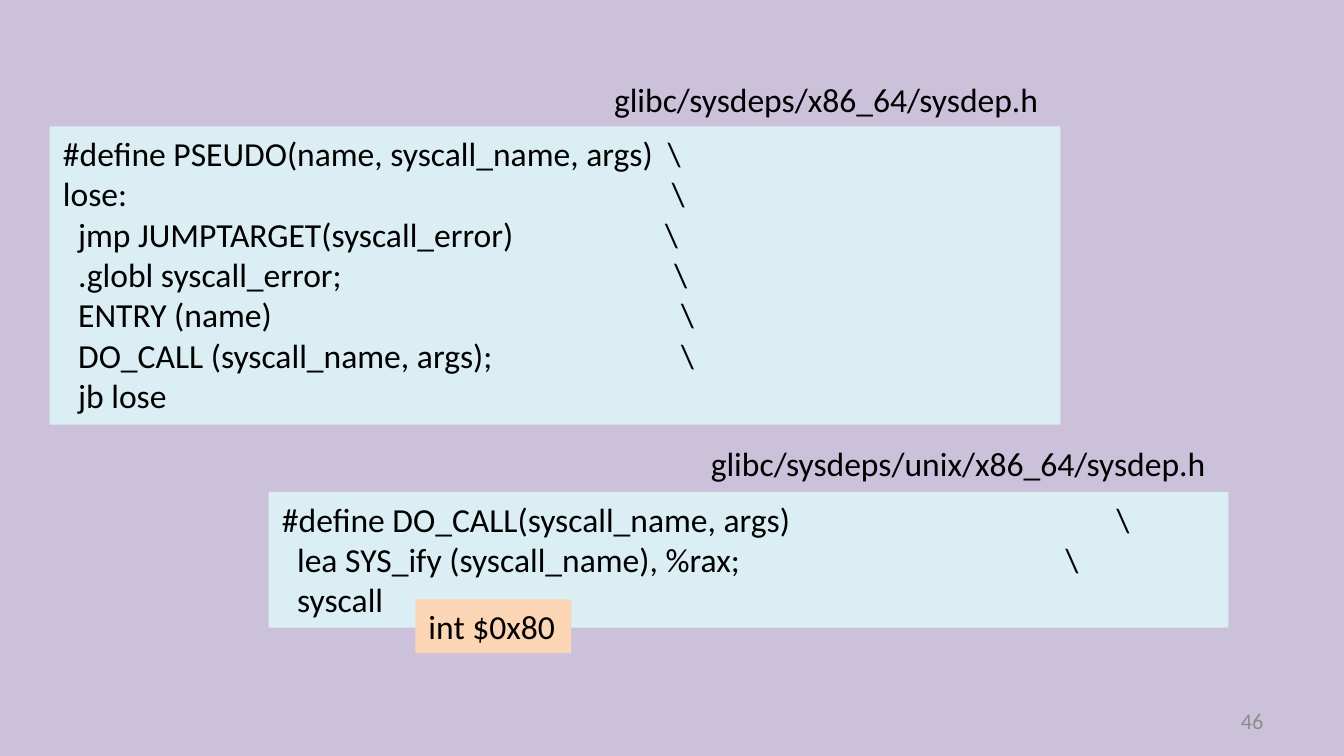
from lxml import etree
from pptx import Presentation
from pptx.dml.color import RGBColor
from pptx.enum.text import MSO_ANCHOR, MSO_AUTO_SIZE, PP_ALIGN
from pptx.oxml.ns import qn
from pptx.util import Inches, Pt

LILAC = RGBColor(0xCC, 0xC1, 0xDA)
PALE_BLUE = RGBColor(0xDB, 0xEE, 0xF4)
PEACH = RGBColor(0xFC, 0xD5, 0xB5)
BLACK = RGBColor(0, 0, 0)
GRAY = RGBColor(0x8C, 0x8C, 0x8C)

TOP, MIDDLE = MSO_ANCHOR.TOP, MSO_ANCHOR.MIDDLE
LEFT, RIGHT = PP_ALIGN.LEFT, PP_ALIGN.RIGHT
GROW, FIXED = MSO_AUTO_SIZE.SHAPE_TO_FIT_TEXT, MSO_AUTO_SIZE.NONE

# Each code line is paired with the tab stop, in inches, of its backslash.
PSEUDO_MACRO = [
    ("#define PSEUDO(name, syscall_name, args)", 4.5),
    ("lose:", 4.53),
    ("  jmp JUMPTARGET(syscall_error)", 4.48),
    ("  .globl syscall_error;", 4.55),
    ("  ENTRY (name)", 4.6),
    ("  DO_CALL (syscall_name, args);", 4.6),
    ("  jb lose", None),
]
DO_CALL_MACRO = [
    ("#define DO_CALL(syscall_name, args)", 6.21),
    ("  lea SYS_ify (syscall_name), %rax;", 5.83),
    ("  syscall", None),
]


def add_box(slide, place, fill=None, wrap=False, size=GROW, anchor=TOP):
    box = slide.shapes.add_textbox(*(Inches(length) for length in place))
    if fill is not None:
        box.fill.solid()
        box.fill.fore_color.rgb = fill
    frame_format = {"word_wrap": wrap, "auto_size": size, "vertical_anchor": anchor}
    for name, value in frame_format.items():
        setattr(box.text_frame, name, value)
    return box


def write(para, text, size=18, color=BLACK, align=LEFT):
    para.alignment = align
    span = para.add_run()
    span.text = text
    for name, value in {"name": "Calibri", "size": Pt(size)}.items():
        setattr(span.font, name, value)
    span.font.color.rgb = color


def add_tab_stop(para, position):
    tabs = etree.SubElement(para._p.get_or_add_pPr(), qn("a:tabLst"))
    etree.SubElement(tabs, qn("a:tab"), pos=str(Inches(position)), algn="l")


def add_label(slide, place, text, fill=None):
    box = add_box(slide, place, fill)
    write(box.text_frame.paragraphs[0], text)


def add_code(slide, place, lines):
    frame = add_box(slide, place, PALE_BLUE, wrap=True).text_frame
    for index, (code, stop) in enumerate(lines):
        para = frame.add_paragraph() if index else frame.paragraphs[0]
        if stop is None:
            write(para, code)
        else:
            add_tab_stop(para, stop)
            write(para, code + "\t\\")


def add_page_number(slide, place, number):
    box = add_box(slide, place, wrap=True, size=FIXED, anchor=MIDDLE)
    write(box.text_frame.paragraphs[0], number, 12, GRAY, RIGHT)


def main():
    deck = Presentation()
    deck.slide_width = Inches(10)
    deck.slide_height = deck.slide_width * 9 // 16
    slide = deck.slides.add_slide(deck.slide_layouts[6])
    slide.background.fill.solid()
    slide.background.fill.fore_color.rgb = LILAC

    add_page_number(slide, (7.17, 5.21, 2.33, 0.3), "46")
    add_code(slide, (2, 3.66, 7.14, 1.01), DO_CALL_MACRO)
    add_label(slide, (5.19, 3.25, 3.95, 0.4), "glibc/sysdeps/unix/x86_64/sysdep.h")
    add_label(slide, (3.09, 4.46, 1.16, 0.4), "int $0x80", PEACH)
    add_code(slide, (0.37, 0.94, 7.52, 2.22), PSEUDO_MACRO)
    add_label(slide, (4.47, 0.54, 3.42, 0.4), "glibc/sysdeps/x86_64/sysdep.h")
    deck.save("out.pptx")


if __name__ == "__main__":
    main()
